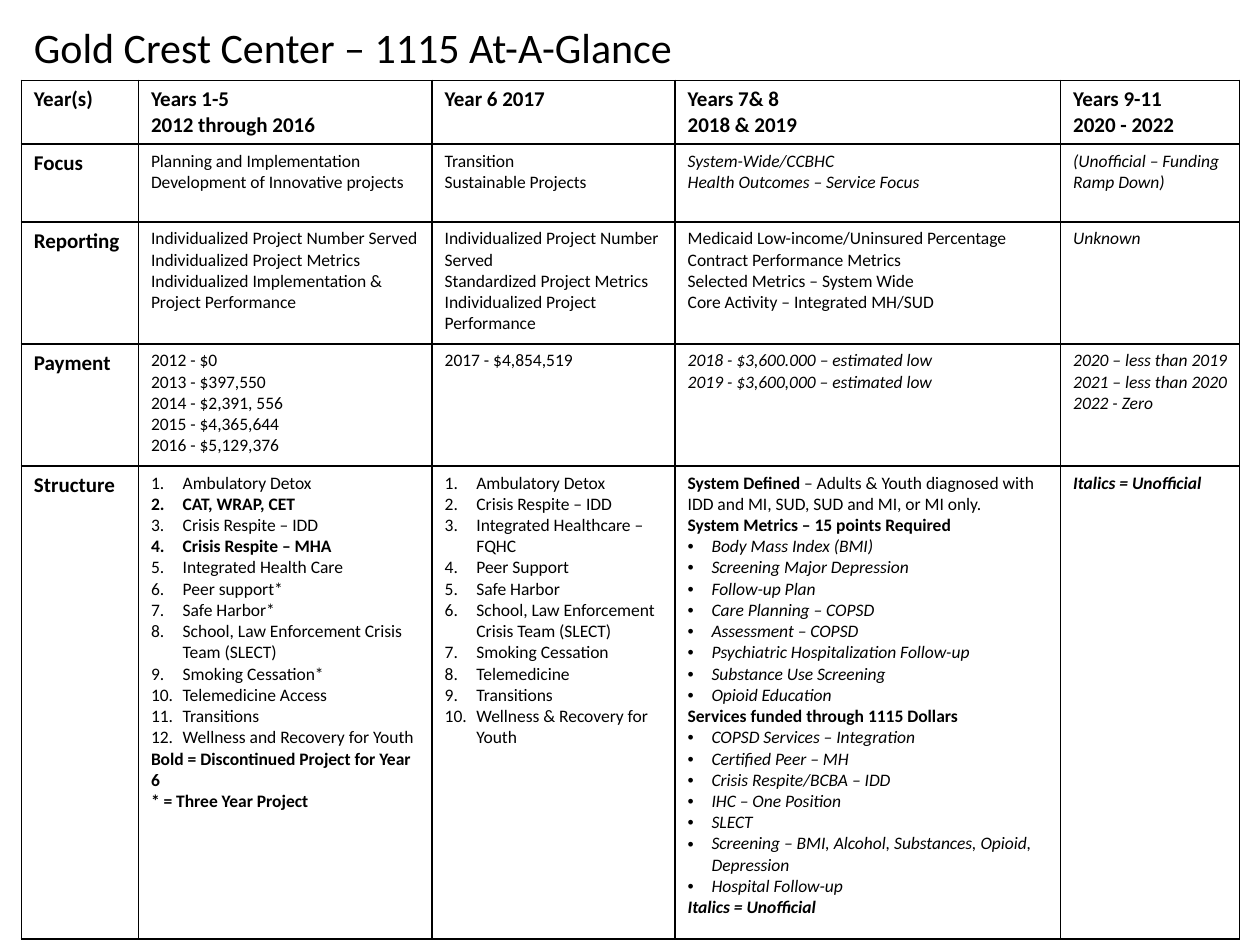
from lxml.etree import SubElement
from pptx import Presentation
from pptx.dml.color import RGBColor
from pptx.enum.text import MSO_ANCHOR, PP_ALIGN
from pptx.oxml.ns import qn
from pptx.util import Cm, Pt

INK = "000000"
COLS = [2.36, 5.92, 4.9, 7.77, 3.61]
ROWS = [1.27, 1.57, 2.46, 2.46, 9.53]

# Line marks: "#" numbers, "•" bullets, "/" italic, bars around bold words.
GRID = [
    [["|Year(s)|"],
     ["|Years 1-5|", "|2012 through 2016|"],
     ["|Year 6 2017|"],
     ["|Years 7& 8|", "|2018 & 2019|"],
     ["|Years 9-11|", "|2020 - 2022|"]],
    [["|Focus|"],
     ["Planning and Implementation", "Development of Innovative projects"],
     ["Transition", "Sustainable Projects"],
     ["/System-Wide/CCBHC", "/Health Outcomes – Service Focus"],
     ["/(Unofficial – Funding Ramp Down)"]],
    [["|Reporting|"],
     ["Individualized Project Number Served", "Individualized Project Metrics",
      "Individualized Implementation & Project Performance"],
     ["Individualized Project Number Served", "Standardized Project Metrics",
      "Individualized Project Performance"],
     ["Medicaid Low-income/Uninsured Percentage", "Contract Performance Metrics",
      "Selected Metrics – System Wide", "Core Activity – Integrated MH/SUD"],
     ["/Unknown"]],
    [["|Payment|"],
     ["2012 - $0", "2013 - $397,550", "2014 - $2,391, 556",
      "2015 - $4,365,644", "2016 - $5,129,376"],
     ["2017 - $4,854,519"],
     ["/2018 - $3,600.000 – estimated low", "/2019 - $3,600,000 – estimated low"],
     ["/2020 – less than 2019", "/2021 – less than 2020", "/2022 - Zero"]],
    [["|Structure|"],
     ["#Ambulatory Detox", "#|CAT, WRAP, CET|", "#Crisis Respite – IDD",
      "#|Crisis Respite – MHA|", "#Integrated Health Care", "#Peer support*",
      "#Safe Harbor*", "#School, Law Enforcement Crisis Team (SLECT)",
      "#Smoking Cessation*", "#Telemedicine Access", "#Transitions",
      "#Wellness and Recovery for Youth",
      "|Bold = Discontinued Project for Year 6|", "|* = Three Year Project|"],
     ["#Ambulatory Detox", "#Crisis Respite – IDD",
      "#Integrated Healthcare – FQHC", "#Peer Support", "#Safe Harbor",
      "#School, Law Enforcement Crisis Team (SLECT)", "#Smoking Cessation",
      "#Telemedicine", "#Transitions", "#Wellness & Recovery for Youth"],
     ["|System Defined| – Adults & Youth diagnosed with IDD and MI, SUD, "
      "SUD and MI, or MI only.",
      "|System Metrics – 15 points Required|",
      "•/Body Mass Index (BMI)", "•/Screening Major Depression",
      "•/Follow-up Plan", "•/Care Planning – COPSD", "•/Assessment – COPSD",
      "•/Psychiatric Hospitalization Follow-up", "•/Substance Use Screening",
      "•/Opioid Education",
      "|Services funded through 1115 Dollars|",
      "•/COPSD Services – Integration", "•/Certified Peer – MH",
      "•/Crisis Respite/BCBA – IDD", "•/IHC – One Position", "•/SLECT",
      "•/Screening – BMI, Alcohol, Substances, Opioid, Depression",
      "•/Hospital Follow-up", "/|Italics = Unofficial|"],
     ["/|Italics = Unofficial|"]],
]


def color(code):
    return RGBColor.from_string(code)


def write(para, text, size=10, bold=False, italic=False):
    run = para.add_run()
    run.text = text
    font = run.font
    font.name, font.size = "Calibri", Pt(size)
    font.bold, font.italic = bold, italic
    font.color.rgb = color(INK)


def mark(para, sign):
    """Give the paragraph a hanging number or bullet."""
    props = para._p.get_or_add_pPr()
    hang = Cm(0.64 if sign == "#" else 0.48)
    props.set("marL", str(hang))
    props.set("indent", str(-hang))
    if sign == "#":
        SubElement(props, qn("a:buFont"), typeface="+mj-lt")
        SubElement(props, qn("a:buAutoNum"), type="arabicPeriod")
    else:
        SubElement(props, qn("a:buFont"), typeface="Arial")
        SubElement(props, qn("a:buChar"), char=sign)


def frame(cell, width=1):
    """Rule all four sides of the cell."""
    props = cell._tc.get_or_add_tcPr()
    for side in ("lnL", "lnR", "lnT", "lnB"):
        line = SubElement(props, qn(f"a:{side}"), w=str(Pt(width)))
        fill = SubElement(line, qn("a:solidFill"))
        SubElement(fill, qn("a:srgbClr"), val=INK)


def fill_cell(cell, lines, size):
    frame(cell)
    cell.fill.background()
    text = cell.text_frame
    for i, line in enumerate(lines):
        para = text.add_paragraph() if i else text.paragraphs[0]
        if line[0] in "#•":
            mark(para, line[0])
            line = line[1:]
        italic = line.startswith("/")
        for j, part in enumerate(line.removeprefix("/").split("|")):
            if part:
                write(para, part, size=size, bold=j % 2 == 1, italic=italic)


def add_title(slide, text, left, top, width, height):
    title = slide.shapes.title
    title.left, title.top = Cm(left), Cm(top)
    title.width, title.height = Cm(width), Cm(height)
    title.text_frame.vertical_anchor = MSO_ANCHOR.TOP
    para = title.text_frame.paragraphs[0]
    para.alignment = PP_ALIGN.LEFT
    para.line_spacing = 0.9
    write(para, text, size=24)


def add_grid(slide, left, top):
    table = slide.shapes.add_table(
        len(ROWS), len(COLS), Cm(left), Cm(top), Cm(sum(COLS)), Cm(sum(ROWS))).table
    table.first_row = table.horz_banding = False
    for col, width in zip(table.columns, COLS):
        col.width = Cm(width)
    for r, (row, height) in enumerate(zip(table.rows, ROWS)):
        row.height = Cm(height)
        for c, cell in enumerate(row.cells):
            fill_cell(cell, GRID[r][c], 12 if r == 0 or c == 0 else 10)


def main():
    deck = Presentation()
    deck.slide_width, deck.slide_height = Cm(25.4), Cm(19.05)
    slide = deck.slides.add_slide(deck.slide_layouts[5])
    add_title(slide, "Gold Crest Center – 1115 At-A-Glance", 0.43, 0.43, 24.56, 1.17)
    add_grid(slide, 0.43, 1.62)
    deck.save("out.pptx")


if __name__ == "__main__":
    main()
